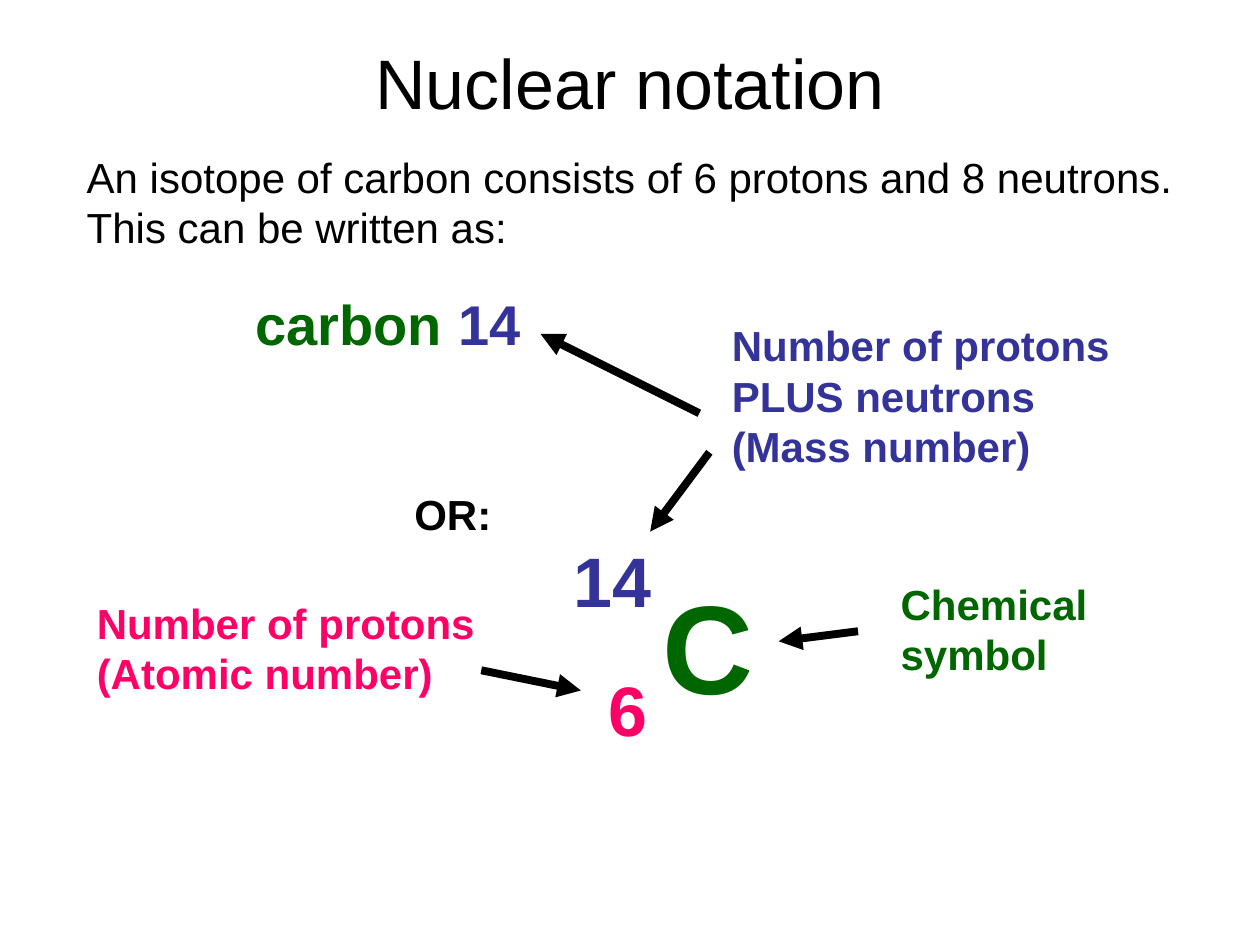
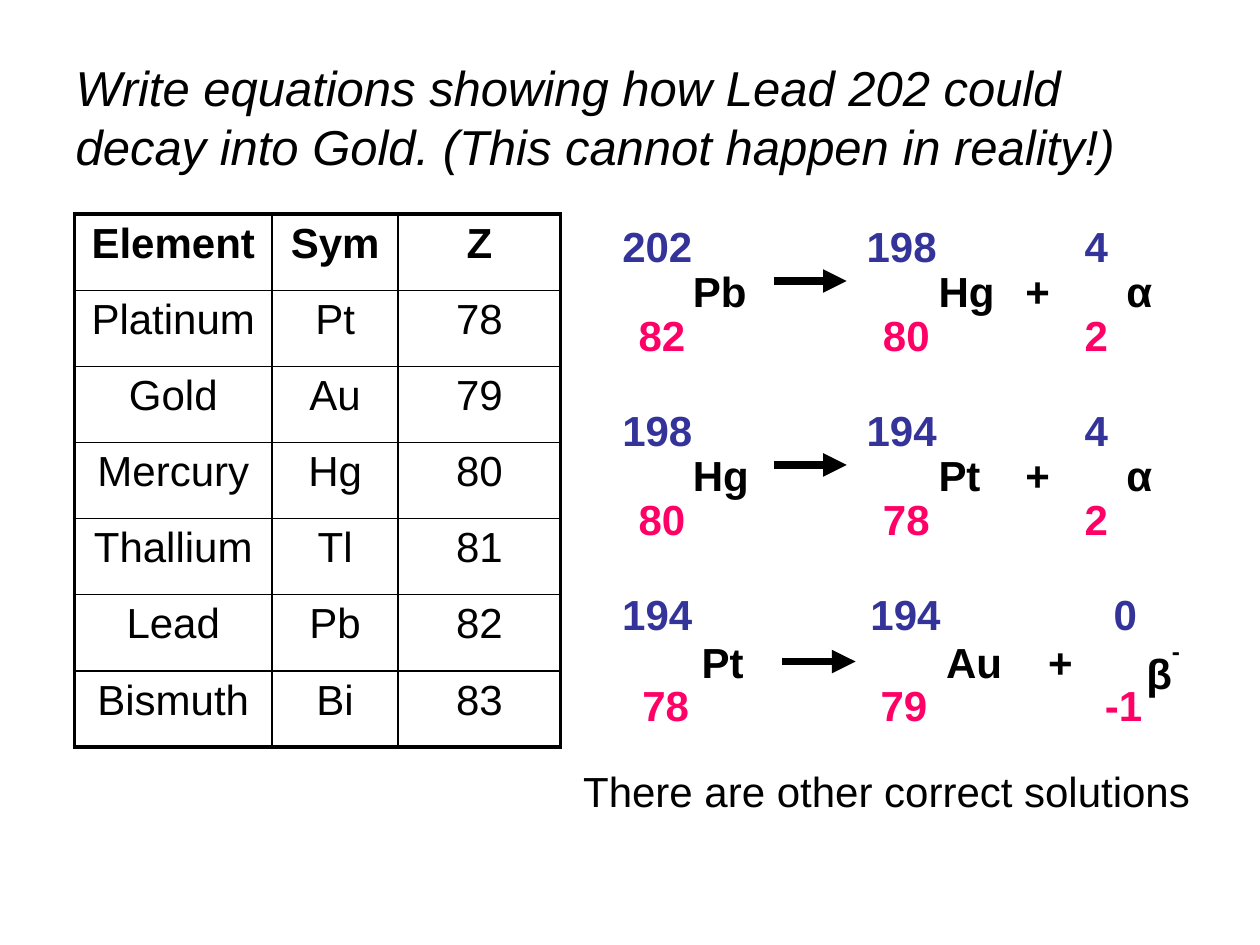
from lxml import etree
from pptx import Presentation
from pptx.dml.color import RGBColor
from pptx.enum import shapes, text
from pptx.oxml import ns
from pptx.util import Inches, Pt

FONT = "Arial"
COLOURS = {
    "text": "000000",
    "mass": "333399",
    "atomic": "FF0066",
    "symbol": "006600",
}
ELEMENTS = [
    ("Element", "Sym", "Z"),
    ("Platinum", "Pt", "78"),
    ("Gold", "Au", "79"),
    ("Mercury", "Hg", "80"),
    ("Thallium", "Tl", "81"),
    ("Lead", "Pb", "82"),
    ("Bismuth", "Bi", "83"),
]

# For each particle: (left, width) of its mass, symbol and atomic number.
ALPHA_LAYOUT = {
    "particles": [
        ((4.84, 0.78), (5.4, 0.75), (4.97, 0.94)),
        ((6.78, 0.78), (7.35, 0.78), (6.91, 1.04)),
        ((8.51, 0.78), (8.84, 0.49), (8.51, 0.55)),
    ],
    "drops": (0, 0.36, 0.71), "arrow": (6.14, 0.53), "plus": 8.04,
}
BETA_LAYOUT = {
    "particles": [
        ((4.84, 0.86), (5.47, 0.56), (5, 0.77)),
        ((6.81, 0.78), (7.41, 1.01), (6.89, 0.78)),
        ((8.74, 0.78), (9, 1), (8.67, 0.55)),
    ],
    "drops": (0, 0.38, 0.72), "arrow": (6.21, 0.63), "plus": 8.22,
}
EQUATIONS = [
    (1.7, ALPHA_LAYOUT,
     [("202", "Pb", "82"), ("198", "Hg", "80"), ("4", "α", "2")]),
    (3.16, ALPHA_LAYOUT,
     [("198", "Hg", "80"), ("194", "Pt", "78"), ("4", "α", "2")]),
    (4.62, BETA_LAYOUT,
     [("194", "Pt", "78"), ("194", "Au", "79"), ("0", "β", "-1")]),
]


def colour(name):
    return RGBColor.from_string(COLOURS[name])


def set_font(font, size, ink="text", bold=False, italic=False):
    font.name = FONT
    font.size = Pt(size)
    font.bold = bold
    font.italic = italic
    font.color.rgb = colour(ink)


def add_titled_slide(prs, wording, height, size, align, italic=False):
    slide = prs.slides.add_slide(prs.slide_layouts[5])
    title = slide.shapes.title
    title.left, title.top = Inches(0.5), Inches(0.3)
    title.width, title.height = Inches(9), Inches(height)
    frame = title.text_frame
    frame.text = wording
    frame.auto_size = text.MSO_AUTO_SIZE.NONE
    frame.vertical_anchor = text.MSO_ANCHOR.MIDDLE
    frame.paragraphs[0].alignment = align
    set_font(frame.paragraphs[0].font, size, italic=italic)
    return slide


def add_label(parent, wording, left, top, width, height=0.5,
              size=24, ink="text", bold=True):
    label = parent.add_textbox(Inches(left), Inches(top),
                               Inches(width), Inches(height))
    frame = label.text_frame
    frame.word_wrap = True
    frame.auto_size = text.MSO_AUTO_SIZE.SHAPE_TO_FIT_TEXT
    paragraph = frame.paragraphs[0]
    paragraph.add_run().text = wording
    set_font(paragraph.font, size, ink, bold)
    return paragraph


def add_arrow(parent, start, end):
    points = [Inches(value) for value in (*start, *end)]
    arrow = parent.add_connector(shapes.MSO_CONNECTOR.STRAIGHT, *points)
    arrow.line.color.rgb = colour("text")
    arrow.line.width = Pt(4.5)
    etree.SubElement(arrow.line._get_or_add_ln(), ns.qn("a:tailEnd"),
                     type="triangle")
    etree.SubElement(arrow._element.spPr, ns.qn("a:effectLst"))


def add_equation(slide, top, layout, particles):
    """Add reactant -> product + emitted particle as one group."""
    group = slide.shapes.add_group_shape().shapes
    for places, parts in zip(layout["particles"], particles):
        for (left, width), drop, part, ink in zip(
                places, layout["drops"], parts, ("mass", "text", "atomic")):
            paragraph = add_label(group, part, left, top + drop, width, ink=ink)
            if part == "β":
                charge = paragraph.add_run()
                charge.text = "-"
                charge.font._element.set("baseline", "68000")
    arrow_left, arrow_drop = layout["arrow"]
    arrow_y = top + arrow_drop
    add_arrow(group, (arrow_left, arrow_y), (arrow_left + 0.58, arrow_y))
    add_label(group, "+", layout["plus"], top + layout["drops"][1], 0.71)


def set_borders(cell, widths):
    """Draw borders whose widths are given as left, right, top, bottom."""
    properties = cell._tc.get_or_add_tcPr()
    for index, (side, width) in enumerate(zip("LRTB", widths)):
        border = etree.Element(ns.qn(f"a:ln{side}"), w=str(Pt(width)))
        fill = etree.SubElement(border, ns.qn("a:solidFill"))
        etree.SubElement(fill, ns.qn("a:srgbClr"), val=COLOURS["text"])
        properties.insert(index, border)


def add_element_table(slide):
    column_widths = (1.57, 1, 1.29)
    row_height = 4.23 / len(ELEMENTS)
    table = slide.shapes.add_table(
        len(ELEMENTS), len(column_widths), Inches(0.59), Inches(1.7),
        Inches(sum(column_widths)), Inches(4.23)).table
    table.first_row = table.horz_banding = False
    for column, width in zip(table.columns, column_widths):
        column.width = Inches(width)
    last_row, last_column = len(ELEMENTS) - 1, len(column_widths) - 1
    for r, element in enumerate(ELEMENTS):
        table.rows[r].height = Inches(row_height)
        for c, wording in enumerate(element):
            cell = table.cell(r, c)
            cell.text = wording
            cell.fill.background()
            paragraph = cell.text_frame.paragraphs[0]
            paragraph.alignment = text.PP_ALIGN.CENTER
            set_font(paragraph.font, 24, bold=r == 0)
            outer = (c == 0, c == last_column, r == 0, r == last_row)
            set_borders(cell, [2.25 if edge else 1 for edge in outer])


def build_notation_slide(prs):
    slide = add_titled_slide(prs, "Nuclear notation", 0.69, 40,
                             text.PP_ALIGN.CENTER)
    canvas = slide.shapes
    add_label(canvas, "An isotope of carbon consists of 6 protons and 8 "
              "neutrons. This can be written as:", 0.59, 1.15, 9.14, 0.9,
              bold=False)
    carbon = add_label(canvas, "carbon ", 1.93, 2.25, 2.52, 0.63, 32, "symbol")
    mass = carbon.add_run()
    mass.text = "14"
    mass.font.color.rgb = colour("mass")
    add_label(canvas, "OR:", 3.19, 3.83, 0.94)

    nuclide = canvas.add_group_shape().shapes
    add_label(nuclide, "C", 5.16, 4.46, 0.87, 1.3, 72, "symbol")
    add_label(nuclide, "14", 4.45, 4.22, 0.91, 0.77, 40, "mass")
    add_label(nuclide, "6", 4.73, 5.24, 0.63, 0.77, 40, "atomic")

    add_label(canvas, "Number of protons PLUS neutrons (Mass number)",
              5.71, 2.49, 3.54, 1.3, ink="mass")
    add_label(canvas, "Number of protons (Atomic number)",
              0.67, 4.69, 3.54, 0.9, ink="atomic")
    add_label(canvas, "Chemical symbol", 7.05, 4.54, 2.6, 0.9, ink="symbol")
    for start, end in [((5.55, 3.28), (4.29, 2.65)),
                       ((5.63, 3.59), (5.16, 4.22)),
                       ((3.82, 5.32), (4.61, 5.48)),
                       ((6.81, 5.01), (6.18, 5.09))]:
        add_arrow(canvas, start, end)


def build_decay_slide(prs):
    slide = add_titled_slide(
        prs, "Write equations showing how Lead 202 could decay into Gold. "
        "(This cannot happen in reality!)", 1.25, 28, text.PP_ALIGN.LEFT,
        italic=True)
    add_element_table(slide)
    for top, layout, particles in EQUATIONS:
        add_equation(slide, top, layout, particles)
    add_label(slide.shapes, "There are other correct solutions",
              4.53, 6.03, 5.12, bold=False)


def main():
    prs = Presentation()
    prs.slide_width, prs.slide_height = Inches(10), Inches(7.5)
    build_notation_slide(prs)
    build_decay_slide(prs)
    prs.save("out.pptx")


if __name__ == "__main__":
    main()
